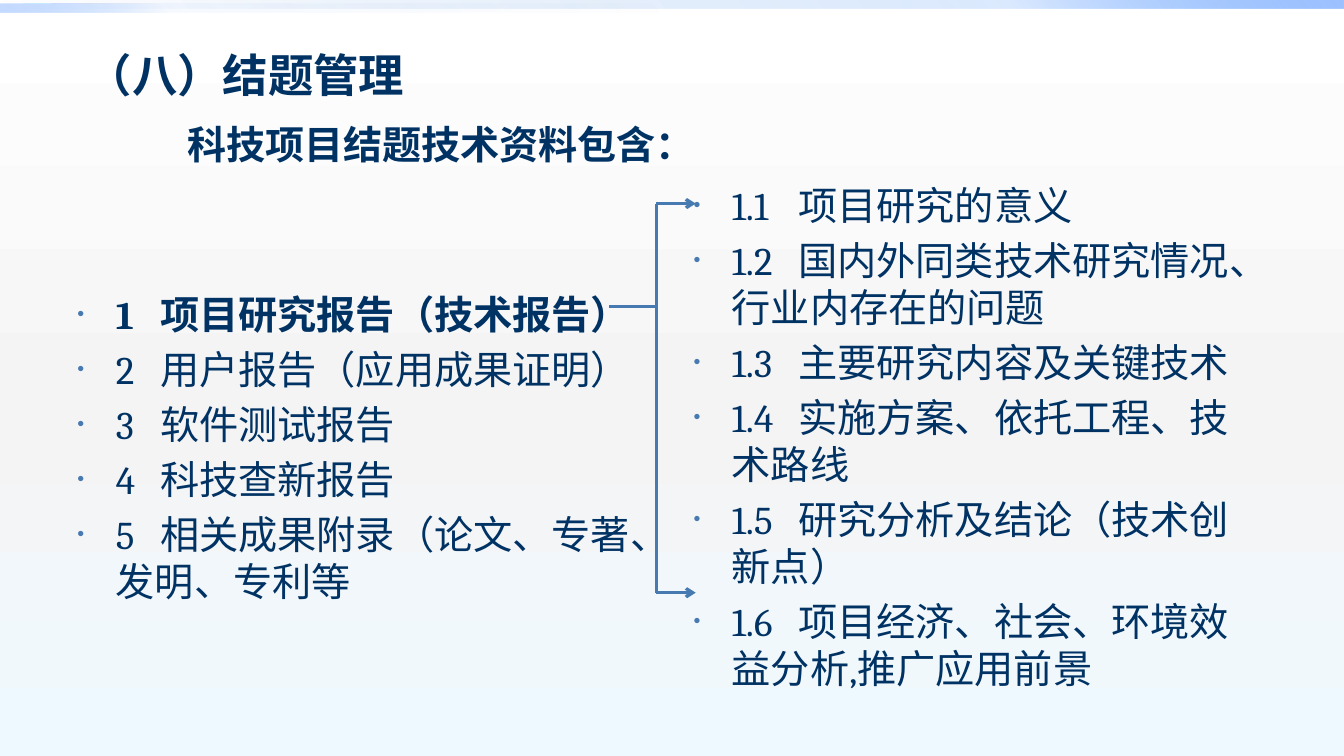
from lxml import etree
from pptx import Presentation
from pptx.dml.color import RGBColor
from pptx.enum.shapes import MSO_CONNECTOR, MSO_SHAPE
from pptx.enum.text import MSO_ANCHOR, MSO_AUTO_SIZE, PP_ALIGN
from pptx.oxml.ns import qn
from pptx.util import Inches, Pt

NAVY, STEEL = "003264", "477AB1"
REPORTS = [
    ("1", "项目研究报告（技术报告）"),
    ("2", "用户报告（应用成果证明）"),
    ("3", "软件测试报告"),
    ("4", "科技查新报告"),
    ("5", "相关成果附录（论文、专著、发明、专利等"),
]
REPORT_SECTIONS = [
    ("1.1", "项目研究的意义"),
    ("1.2", "国内外同类技术研究情况、行业内存在的问题"),
    ("1.3", "主要研究内容及关键技术"),
    ("1.4", "实施方案、依托工程、技术路线"),
    ("1.5", "研究分析及结论（技术创新点）"),
    ("1.6", "项目经济、社会、环境效益分析,推广应用前景"),
]


def color(value):
    return RGBColor.from_string(value)


def add_child(parent, tag, **attributes):
    child = etree.SubElement(parent, qn(tag))
    for name, value in attributes.items():
        child.set(name, str(value))
    return child


def set_gradient(fill, owner, stops, angle):
    """Fill with (position %, colour, opacity %) stops."""
    fill.solid()
    solid = next(owner.iter(qn("a:solidFill")))
    gradient = etree.Element(qn("a:gradFill"), rotWithShape="1")
    stop_list = add_child(gradient, "a:gsLst")
    for position, value, opacity in stops:
        stop = add_child(stop_list, "a:gs", pos=position * 1000)
        rgb = add_child(stop, "a:srgbClr", val=value)
        if opacity < 100:
            add_child(rgb, "a:alpha", val=opacity * 1000)
    add_child(gradient, "a:lin", ang=angle * 60000, scaled=0)
    solid.getparent().replace(solid, gradient)


def add_top_bar(slide, left, top, width, height, opacities, angle):
    bar = slide.shapes.add_shape(
        MSO_SHAPE.RECTANGLE, Inches(left), Inches(top), Inches(width), Inches(height))
    bar.shadow.inherit = False
    bar.line.fill.background()
    stops = zip((0, 75, 100), ("0058B7", "4F95FF", "9EC2FF"), opacities)
    set_gradient(bar.fill, bar.element.spPr, stops, angle)


def add_backdrop(slide):
    stops = [(0, "FFFFFF", 100), (55, "F4F4F4", 100), (100, "EEF9FF", 100)]
    set_gradient(slide.background.fill, slide.element, stops, 90)
    add_top_bar(slide, 0, 0, 13.33, 0.08, (0, 20, 100), 315)
    add_top_bar(slide, 0, 0.04, 6.67, 0.08, (0, 5, 60), 135)


def set_title(slide, left, top, width, height):
    title = slide.shapes.title
    title.left, title.top = Inches(left), Inches(top)
    title.width, title.height = Inches(width), Inches(height)
    frame = title.text_frame
    frame.text = "（八）结题管理\n科技项目结题技术资料包含："
    frame.auto_size = MSO_AUTO_SIZE.NONE
    frame.vertical_anchor = MSO_ANCHOR.MIDDLE
    for paragraph, size in zip(frame.paragraphs, (32.4, 27.9)):
        paragraph.alignment = PP_ALIGN.LEFT
        font = paragraph.font
        font.name, font.size, font.bold = "Arial", Pt(size), True
        font.color.rgb = color(NAVY)
    subtitle = frame.paragraphs[1]
    subtitle.space_before = Pt(13)
    subtitle._p.get_or_add_pPr().set("marL", str(Inches(1)))


def add_numbered_list(slide, left, top, width, height, items, tab, bold_first=False):
    """Bulleted items whose wording starts at the tab after the number."""
    box = slide.shapes.add_textbox(
        Inches(left), Inches(top), Inches(width), Inches(height))
    frame = box.text_frame
    frame.word_wrap = True
    frame.text = "\n".join(f"{number}\t{wording}" for number, wording in items)
    for index, paragraph in enumerate(frame.paragraphs):
        if index:
            paragraph.space_before = Pt(5.6)
        properties = paragraph._p.get_or_add_pPr()
        properties.set("marL", str(Inches(0.38)))
        properties.set("indent", str(Inches(-0.38)))
        bullet_color = add_child(properties, "a:buClr")
        add_child(bullet_color, "a:srgbClr", val=STEEL)
        add_child(properties, "a:buSzPct", val=50000)
        add_child(properties, "a:buFont", typeface="Arial")
        add_child(properties, "a:buChar", char="•")
        tabs = add_child(properties, "a:tabLst")
        add_child(tabs, "a:tab", pos=Inches(tab), algn="l")
        font = paragraph.font
        font.name, font.size = "Cambria", Pt(28)
        font.bold = bold_first and index == 0
        font.color.rgb = color(NAVY)


def add_line(slide, start, end, arrow=False):
    connector = slide.shapes.add_connector(
        MSO_CONNECTOR.STRAIGHT, *(Inches(value) for value in start + end))
    connector.line.color.rgb = color(STEEL)
    connector.line.width = Pt(2.25)
    if arrow:
        add_child(connector.line._get_or_add_ln(), "a:tailEnd", type="arrow")
    add_child(connector.element.spPr, "a:effectLst")


def add_bracket(slide, left, top, width, height):
    """Stem from the first report to a spine with an arrow at each end."""
    spine, right, bottom = left + 0.47, left + width, top + height
    stem = top + 1.02
    add_line(slide, (spine, top), (spine, bottom))
    add_line(slide, (left, stem), (spine, stem))
    for level in (top, bottom):
        add_line(slide, (spine, level), (right, level), arrow=True)


def build_slide(presentation):
    slide = presentation.slides.add_slide(presentation.slide_layouts[5])
    add_backdrop(slide)
    set_title(slide, 0.76, 0.44, 12, 1.25)
    add_numbered_list(slide, 0.67, 2.83, 5.89, 3.87, REPORTS, 0.82, bold_first=True)
    add_numbered_list(slide, 6.78, 1.75, 5.89, 4.95, REPORT_SECTIONS, 1.04)
    add_bracket(slide, 6.04, 2.02, 0.86, 3.86)


def main():
    presentation = Presentation()
    presentation.slide_width, presentation.slide_height = Inches(13.33), Inches(7.5)
    build_slide(presentation)
    presentation.save("out.pptx")


if __name__ == "__main__":
    main()
